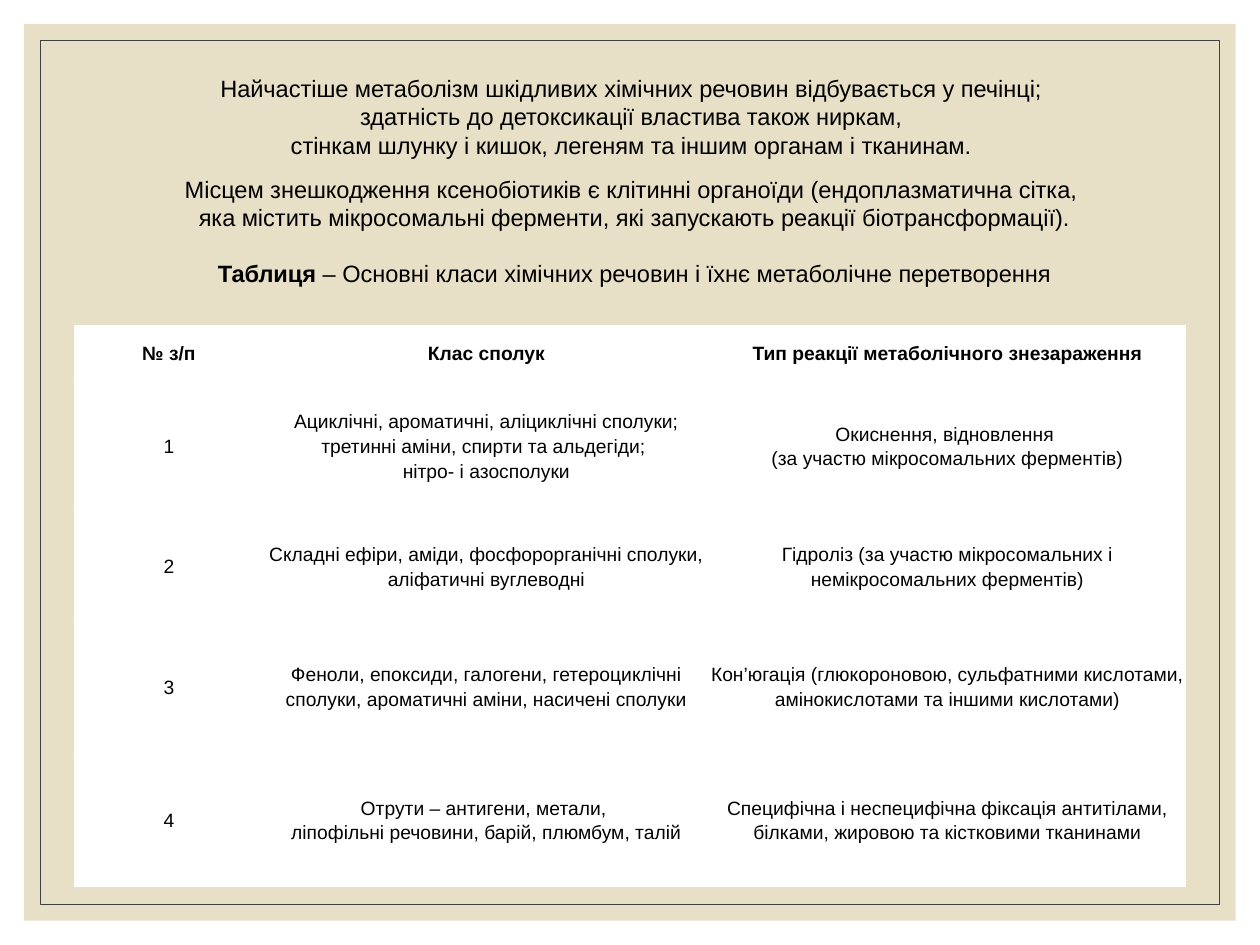
from pptx import Presentation
from pptx.dml.color import RGBColor
from pptx.enum.shapes import MSO_SHAPE
from pptx.enum.text import MSO_ANCHOR, PP_ALIGN
from pptx.util import Cm, Pt

RECT = MSO_SHAPE.RECTANGLE
TOP, MIDDLE = MSO_ANCHOR.TOP, MSO_ANCHOR.MIDDLE
CENTER = PP_ALIGN.CENTER

BLACK = RGBColor(0x00, 0x00, 0x00)
WHITE = RGBColor(0xFF, 0xFF, 0xFF)
SAND = RGBColor(0xE7, 0xE0, 0xC7)
GRAY = RGBColor(0x40, 0x40, 0x40)

INTRO = [
    (0, [("Найчастіше метаболізм шкідливих хімічних речовин відбувається у печінці; ", False)]),
    (0, [("здатність до детоксикації властива також ниркам, ", False)]),
    (0, [("стінкам шлунку і кишок, легеням та іншим органам і тканинам. ", False)]),
    (9.2, [("Місцем знешкодження ксенобіотиків є клітинні органоїди (ендоплазматична сітка, ", False)]),
    (0, [("яка містить мікросомальні ферменти, які запускають реакції біотрансформації).", False)]),
    (15.5, [("Таблиця ", True),
            ("– Основні класи хімічних речовин і їхнє метаболічне перетворення", False)]),
]

HEADER = ["№ з/п", "Клас сполук", "Тип реакції метаболічного знезараження"]
REACTIONS = [
    (["Ациклічні, ароматичні, аліциклічні сполуки; третинні аміни, спирти та альдегіди; ",
      "нітро- і азосполуки"],
     ["Окиснення, відновлення ", "(за участю мікросомальних ферментів)"]),
    (["Складні ефіри, аміди, фосфорорганічні сполуки, аліфатичні вуглеводні"],
     ["Гідроліз (за участю мікросомальних і немікросомальних ферментів)"]),
    (["Феноли, епоксиди, галогени, гетероциклічні сполуки, ароматичні аміни, насичені сполуки"],
     ["Кон’югація (глюкороновою, сульфатними кислотами, амінокислотами та іншими кислотами)"]),
    (["Отрути – антигени, метали, ", "ліпофільні речовини, барій, плюмбум, талій"],
     ["Специфічна і неспецифічна фіксація антитілами, білками, жировою та кістковими тканинами"]),
]
COL_WIDTHS = [3.81, 8.99, 9.6]
ROW_HEIGHTS = [1.07, 2.69, 2.16, 2.69, 2.69]


class SlideBuilder:
    font = "Arial"
    text_size = 13.5
    table_size = 11

    def __init__(self, slide):
        self.slide = slide

    def rect(self, x, y, w, h, fill=None, line=None):
        sp = self.slide.shapes.add_shape(RECT, Cm(x), Cm(y), Cm(w), Cm(h))
        sp.shadow.inherit = False
        if fill is None:
            sp.fill.background()
        else:
            sp.fill.solid()
            sp.fill.fore_color.rgb = fill
        if line is None:
            sp.line.fill.background()
        else:
            sp.line.color.rgb = line
            sp.line.width = Pt(0.5)

    def run(self, p, text, size, bold=False):
        r = p.add_run()
        r.text = text
        r.font.name = self.font
        r.font.size = Pt(size)
        r.font.bold = bold
        r.font.color.rgb = BLACK

    def paragraphs(self, tf, items, size, line_spacing=1.0):
        for i, (gap, runs) in enumerate(items):
            p = tf.add_paragraph() if i else tf.paragraphs[0]
            p.alignment = CENTER
            p.space_before = Pt(gap)
            p.line_spacing = line_spacing
            for text, bold in runs:
                self.run(p, text, size, bold)

    def text(self, x, y, w, h, items):
        tf = self.slide.shapes.add_textbox(Cm(x), Cm(y), Cm(w), Cm(h)).text_frame
        tf.word_wrap = True
        tf.vertical_anchor = TOP
        tf.margin_top = Cm(0.25)
        self.paragraphs(tf, items, self.text_size)

    def table(self, x, y, widths, heights, rows):
        table = self.slide.shapes.add_table(
            len(heights), len(widths), Cm(x), Cm(y),
            Cm(sum(widths)), Cm(sum(heights))).table
        table.horz_banding = False
        for col, width in zip(table.columns, widths):
            col.width = Cm(width)
        for i, (row, height, values) in enumerate(zip(table.rows, heights, rows)):
            row.height = Cm(height)
            for cell, lines in zip(row.cells, values):
                self.cell(cell, lines, bold=i == 0)

    def cell(self, cell, lines, bold):
        cell.fill.solid()
        cell.fill.fore_color.rgb = WHITE
        cell.vertical_anchor = MIDDLE
        cell.margin_left = cell.margin_right = 0
        cell.margin_top = cell.margin_bottom = 0
        items = [(0, [(line, bold)]) for line in lines]
        self.paragraphs(cell.text_frame, items, self.table_size, 1.15)


def main():
    prs = Presentation()
    prs.slide_width, prs.slide_height = Cm(25.4), Cm(19.05)
    s = SlideBuilder(prs.slides.add_slide(prs.slide_layouts[6]))
    s.rect(0.48, 0.48, 24.43, 18.08, fill=SAND)
    s.rect(0.81, 0.81, 23.78, 17.42, line=GRAY)
    rows = [[[title] for title in HEADER]]
    rows += [[[str(n)], *pair] for n, pair in enumerate(REACTIONS, 1)]
    s.table(1.5, 6.56, COL_WIDTHS, ROW_HEIGHTS, rows)
    s.text(0.89, 1.24, 23.8, 5.21, INTRO)
    prs.save("out.pptx")


if __name__ == "__main__":
    main()
